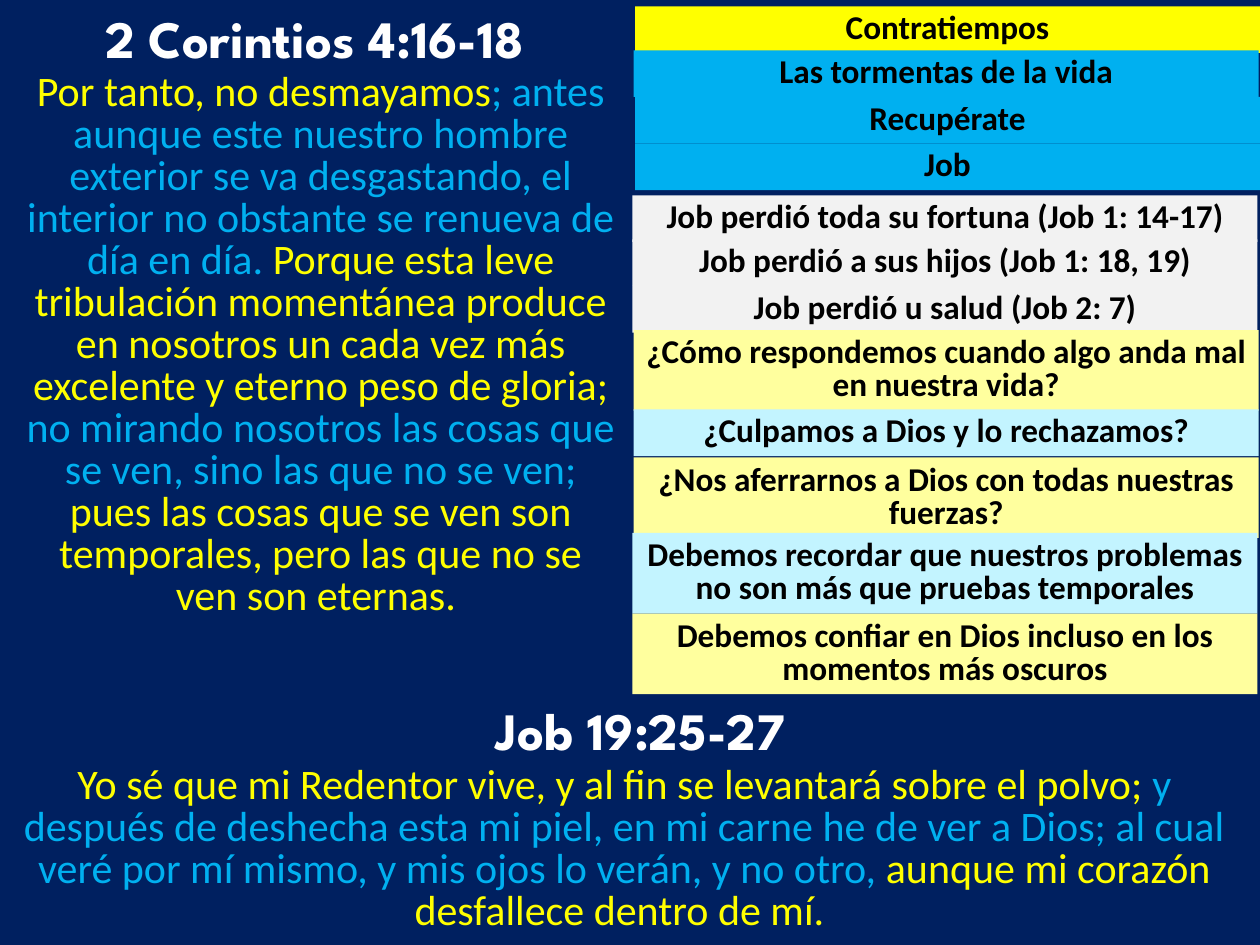
from dataclasses import dataclass

from pptx import Presentation
from pptx import util as u
from pptx.dml.color import RGBColor
from pptx.enum import shapes, text


@dataclass(frozen=True)
class Theme:
    navy: str = "002060"
    white: str = "FFFFFF"
    black: str = "000000"
    yellow: str = "FFFF00"
    blue: str = "00B0F0"
    grey: str = "F2F2F2"
    cream: str = "FFFF9E"
    ice: str = "C3F4FF"
    body_font: str = "Calibri"
    title_font: str = "League Spartan"
    title_size: int = 30
    verse_size: int = 24
    point_size: int = 19


THEME = Theme()
POINT_WIDTH = 4.96
LINE_HEIGHTS = {1: 0.37, 2: 0.64}

# left, top, lines of text, fill, paragraphs
POINTS = [
    (5.04, 0.05, 1, THEME.yellow, ["Contratiempos"]),
    (5.03, 0.40, 1, THEME.blue, ["Las tormentas de la vida"]),
    (5.04, 0.77, 1, THEME.blue, ["Recupérate"]),
    (5.04, 1.14, 1, THEME.blue, ["Job"]),
    (5.02, 1.55, 1, THEME.grey, ["Job perdió toda su fortuna (Job 1: 14-17)"]),
    (5.02, 1.90, 1, THEME.grey, ["Job perdió a sus hijos (Job 1: 18, 19)"]),
    (5.02, 2.27, 1, THEME.grey, ["Job perdió u salud (Job 2: 7)"]),
    (5.03, 2.62, 2, THEME.cream,
     ["¿Cómo respondemos cuando algo anda mal en nuestra vida?"]),
    (5.03, 3.25, 1, THEME.ice, ["¿Culpamos a Dios y lo rechazamos?"]),
    (5.03, 3.63, 2, THEME.cream,
     ["¿Nos aferrarnos a Dios con todas nuestras fuerzas?"]),
    (5.02, 4.23, 2, THEME.ice,
     ["Debemos recordar que nuestros problemas no son más que pruebas temporales"]),
    (5.02, 4.87, 2, THEME.cream,
     ["Debemos confiar en Dios incluso en los", "momentos más oscuros"]),
]

# Successive runs alternate between yellow and blue
CORINTHIANS = [
    "Por tanto, no desmayamos",
    "; antes aunque este nuestro hombre exterior se va desgastando, "
    "el interior no obstante se renueva de día en día. ",
    "Porque esta leve tribulación momentánea produce en nosotros "
    "un cada vez más excelente y eterno peso de gloria; ",
    "no mirando nosotros las cosas que se ven, sino las que no se ven; ",
    "pues las cosas que se ven son temporales, pero las que no se ven son eternas. ",
]
JOB = [
    "Yo sé que mi Redentor vive, y al fin se levantará sobre el polvo; ",
    "y después de deshecha esta mi piel, en mi carne he de ver a Dios; "
    "al cual veré por mí mismo, y mis ojos lo verán, y no otro, ",
    "aunque mi corazón desfallece dentro de mí. ",
]


def rgb(value):
    return RGBColor.from_string(value)


def inches(*lengths):
    return [u.Inches(length) for length in lengths]


def write(sp, paragraphs, font, size, bold=False, spacing=None):
    """Fill a shape with centred paragraphs, each a list of (words, colour)."""
    tf = sp.text_frame
    tf.word_wrap = True
    tf.auto_size = text.MSO_AUTO_SIZE.SHAPE_TO_FIT_TEXT
    for i, runs in enumerate(paragraphs):
        p = tf.add_paragraph() if i else tf.paragraphs[0]
        p.alignment = text.PP_ALIGN.CENTER
        if spacing:
            p.line_spacing = u.Pt(spacing)
        for words, color in runs:
            r = p.add_run()
            r.text = words
            r.font.name = font
            r.font.size = u.Pt(size)
            r.font.bold = bold
            r.font.color.rgb = rgb(color)


def add_point(s, left, top, lines, fill, paragraphs):
    sp = s.shapes.add_shape(
        shapes.MSO_SHAPE.RECTANGLE,
        *inches(left, top, POINT_WIDTH, LINE_HEIGHTS[lines]))
    sp.shadow.inherit = False
    sp.fill.solid()
    sp.fill.fore_color.rgb = rgb(fill)
    sp.line.fill.background()
    sp.text_frame.vertical_anchor = text.MSO_ANCHOR.MIDDLE
    write(sp, [[(words, THEME.black)] for words in paragraphs],
          THEME.body_font, THEME.point_size, True, THEME.point_size)


def add_title(s, box, words):
    sp = s.shapes.add_textbox(*inches(*box))
    write(sp, [[(words, THEME.white)]], THEME.title_font, THEME.title_size, True)


def add_verse(s, box, phrases):
    sp = s.shapes.add_textbox(*inches(*box))
    colors = (THEME.yellow, THEME.blue)
    runs = [(words, colors[i % 2]) for i, words in enumerate(phrases)]
    write(sp, [runs], THEME.body_font, THEME.verse_size, spacing=THEME.verse_size)


def main():
    prs = Presentation()
    prs.slide_width, prs.slide_height = inches(10, 7.5)
    s = prs.slides.add_slide(prs.slide_layouts[6])
    s.background.fill.solid()
    s.background.fill.fore_color.rgb = rgb(THEME.navy)

    for point in POINTS[:-2]:
        add_point(s, *point)
    add_title(s, (3.1, 5.49, 3.86, 0.61), " Job 19:25-27")
    add_verse(s, (0, 6.03, 9.91, 1.45), JOB)
    add_title(s, (0.12, 0, 4.65, 0.61), " 2 Corintios 4:16-18")
    add_verse(s, (0.09, 0.53, 4.91, 4.48), CORINTHIANS)
    for point in POINTS[-2:]:
        add_point(s, *point)

    prs.save("out.pptx")


if __name__ == "__main__":
    main()
